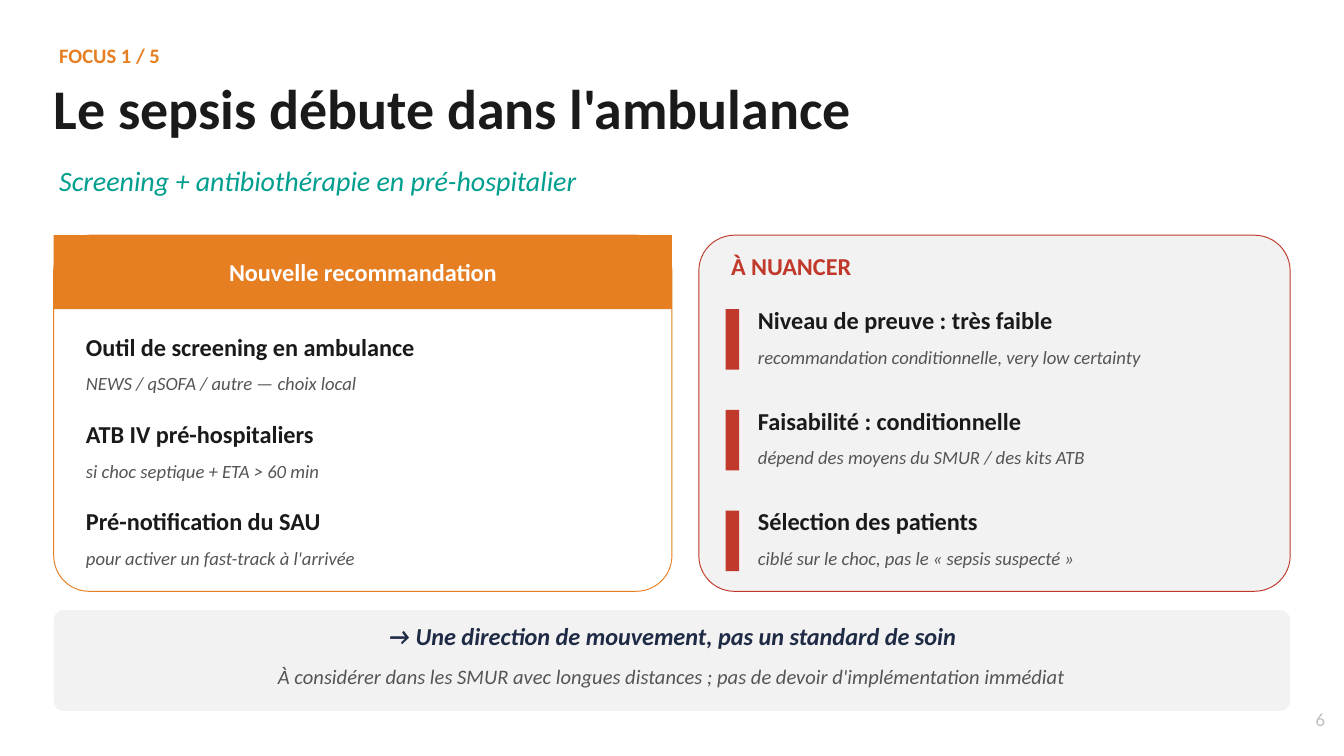
"""Build the slide on pre-hospital sepsis care, with its recommendation and caveat panels."""
from dataclasses import dataclass

from pptx import Presentation
from pptx.dml.color import RGBColor
from pptx.enum.shapes import MSO_SHAPE
from pptx.enum.text import MSO_ANCHOR, MSO_AUTO_SIZE, PP_ALIGN
from pptx.shapes.autoshape import Shape
from pptx.slide import Slide
from pptx.util import Inches, Pt

LEFT, CENTER, RIGHT = PP_ALIGN.LEFT, PP_ALIGN.CENTER, PP_ALIGN.RIGHT
TOP, MIDDLE = MSO_ANCHOR.TOP, MSO_ANCHOR.MIDDLE
RECT, ROUNDED = MSO_SHAPE.RECTANGLE, MSO_SHAPE.ROUNDED_RECTANGLE
FIT_SHAPE = MSO_AUTO_SIZE.SHAPE_TO_FIT_TEXT
TITLE_ONLY = 5


@dataclass(frozen=True)
class Theme:
    font: str = "Calibri"
    orange: str = "E67E22"
    red: str = "C0392B"
    teal: str = "009E8E"
    navy: str = "1F2A44"
    ink: str = "1A1A1A"
    muted: str = "555555"
    faint: str = "C0C0C0"
    panel: str = "F2F2F2"
    white: str = "FFFFFF"
    title_size: int = 30
    subtitle_size: int = 15
    heading_size: int = 13
    label_size: int = 11
    detail_size: int = 10


THEME = Theme()


@dataclass(frozen=True)
class Box:
    left: float
    top: float
    width: float
    height: float

    def lengths(self) -> tuple:
        return tuple(Inches(side) for side in (self.left, self.top, self.width, self.height))


@dataclass(frozen=True)
class Style:
    size: int
    color: str
    bold: bool = False
    italic: bool = False


@dataclass(frozen=True)
class Point:
    heading: str
    detail: str


HEADING = Style(THEME.heading_size, THEME.ink, bold=True)
DETAIL = Style(THEME.detail_size, THEME.muted, italic=True)

RECOMMENDATIONS = (
    Point("Outil de screening en ambulance", "NEWS / qSOFA / autre — choix local"),
    Point("ATB IV pré-hospitaliers", "si choc septique + ETA > 60 min"),
    Point("Pré-notification du SAU", "pour activer un fast-track à l'arrivée"),
)
CAVEATS = (
    Point("Niveau de preuve : très faible", "recommandation conditionnelle, very low certainty"),
    Point("Faisabilité : conditionnelle", "dépend des moyens du SMUR / des kits ATB"),
    Point("Sélection des patients", "ciblé sur le choc, pas le « sepsis suspecté »"),
)


def write(target: Shape, text: str, style: Style, align: PP_ALIGN = LEFT,
          anchor: MSO_ANCHOR = TOP, inset: tuple[float, float] = (0.04, 0.02),
          wrap: bool = True) -> None:
    """Fill a text frame with one styled run."""
    frame = target.text_frame
    frame.word_wrap = wrap
    frame.auto_size = FIT_SHAPE
    frame.vertical_anchor = anchor
    frame.margin_left = frame.margin_right = Inches(inset[0])
    frame.margin_top = frame.margin_bottom = Inches(inset[1])
    paragraph = frame.paragraphs[0]
    paragraph.alignment = align
    run = paragraph.add_run()
    run.text = text
    run.font.name = THEME.font
    run.font.size = Pt(style.size)
    run.font.bold = style.bold
    run.font.italic = style.italic
    run.font.color.rgb = RGBColor.from_string(style.color)


def add_text(slide: Slide, box: Box, text: str, style: Style,
             align: PP_ALIGN = LEFT, anchor: MSO_ANCHOR = TOP) -> None:
    """Add a text box with one styled line."""
    write(slide.shapes.add_textbox(*box.lengths()), text, style, align, anchor)


def add_block(slide: Slide, kind: MSO_SHAPE, box: Box, fill: str,
              outline: str | None = None) -> None:
    """Add a flat filled shape with an optional thin outline."""
    block = slide.shapes.add_shape(kind, *box.lengths())
    block.shadow.inherit = False
    block.fill.solid()
    block.fill.fore_color.rgb = RGBColor.from_string(fill)
    if kind == ROUNDED:
        block.adjustments[0] = 0.1
    if outline:
        block.line.color.rgb = RGBColor.from_string(outline)
        block.line.width = Pt(0.5)
    else:
        block.line.fill.background()


def add_points(slide: Slide, points: tuple[Point, ...], first: Box, pitch: float,
               bar_color: str | None = None) -> None:
    """Stack headings with their details, each with an optional side bar."""
    for index, point in enumerate(points):
        top = first.top + index * pitch
        if bar_color:
            add_block(slide, RECT, Box(first.left - 0.2, top + 0.05, 0.1, 0.45), bar_color)
        add_text(slide, Box(first.left, top, first.width, first.height), point.heading, HEADING)
        add_text(slide, Box(first.left, top + 0.3, first.width, 0.21), point.detail, DETAIL)


def add_header(slide: Slide) -> None:
    """Write the section label, title and subtitle."""
    title = slide.shapes.title
    title.left, title.top, title.width, title.height = Box(0.4, 0.55, 6.01, 0.5).lengths()
    write(title, "Le sepsis débute dans l'ambulance",
          Style(THEME.title_size, THEME.ink, bold=True), inset=(0, 0), wrap=False)
    add_text(slide, Box(0.4, 0.3, 3, 0.23), "FOCUS 1 / 5",
             Style(THEME.label_size, THEME.orange, bold=True))
    add_text(slide, Box(0.4, 1.2, 9, 0.29), "Screening + antibiothérapie en pré-hospitalier",
             Style(THEME.subtitle_size, THEME.teal, italic=True))


def add_recommendation_panel(slide: Slide) -> None:
    """Draw the left panel with its banner and recommendations."""
    add_block(slide, ROUNDED, Box(0.4, 1.75, 4.6, 2.65), THEME.white, THEME.orange)
    add_block(slide, RECT, Box(0.4, 1.75, 4.6, 0.55), THEME.orange)
    add_text(slide, Box(0.4, 1.89, 4.6, 0.26), "Nouvelle recommandation",
             Style(THEME.heading_size, THEME.white, bold=True), CENTER, MIDDLE)
    add_points(slide, RECOMMENDATIONS, Box(0.6, 2.45, 4.3, 0.26), 0.65)


def add_caveat_panel(slide: Slide) -> None:
    """Draw the right panel with its barred caveats."""
    add_block(slide, ROUNDED, Box(5.2, 1.75, 4.4, 2.65), THEME.panel, THEME.red)
    add_text(slide, Box(5.4, 1.85, 4, 0.26), "À NUANCER",
             Style(THEME.heading_size, THEME.red, bold=True))
    add_points(slide, CAVEATS, Box(5.6, 2.25, 4, 0.26), 0.75, THEME.red)


def add_conclusion(slide: Slide) -> None:
    """Draw the closing message and page number."""
    add_block(slide, ROUNDED, Box(0.4, 4.54, 9.2, 0.75), THEME.panel)
    add_text(slide, Box(0.5, 4.6, 9, 0.26),
             "→ Une direction de mouvement, pas un standard de soin",
             Style(THEME.heading_size, THEME.navy, bold=True, italic=True), CENTER)
    add_text(slide, Box(0.5, 4.92, 9, 0.23),
             "À considérer dans les SMUR avec longues distances ; "
             "pas de devoir d'implémentation immédiat",
             Style(THEME.label_size, THEME.muted, italic=True), CENTER)
    add_text(slide, Box(9.6, 5.25, 0.3, 0.21), "6",
             Style(THEME.detail_size, THEME.faint), RIGHT)


def main() -> None:
    """Assemble and save the slide."""
    deck = Presentation()
    deck.slide_width = Inches(10)
    deck.slide_height = Inches(10 * 9 / 16)
    slide = deck.slides.add_slide(deck.slide_layouts[TITLE_ONLY])
    add_header(slide)
    add_recommendation_panel(slide)
    add_caveat_panel(slide)
    add_conclusion(slide)
    deck.save("out.pptx")


if __name__ == "__main__":
    main()
